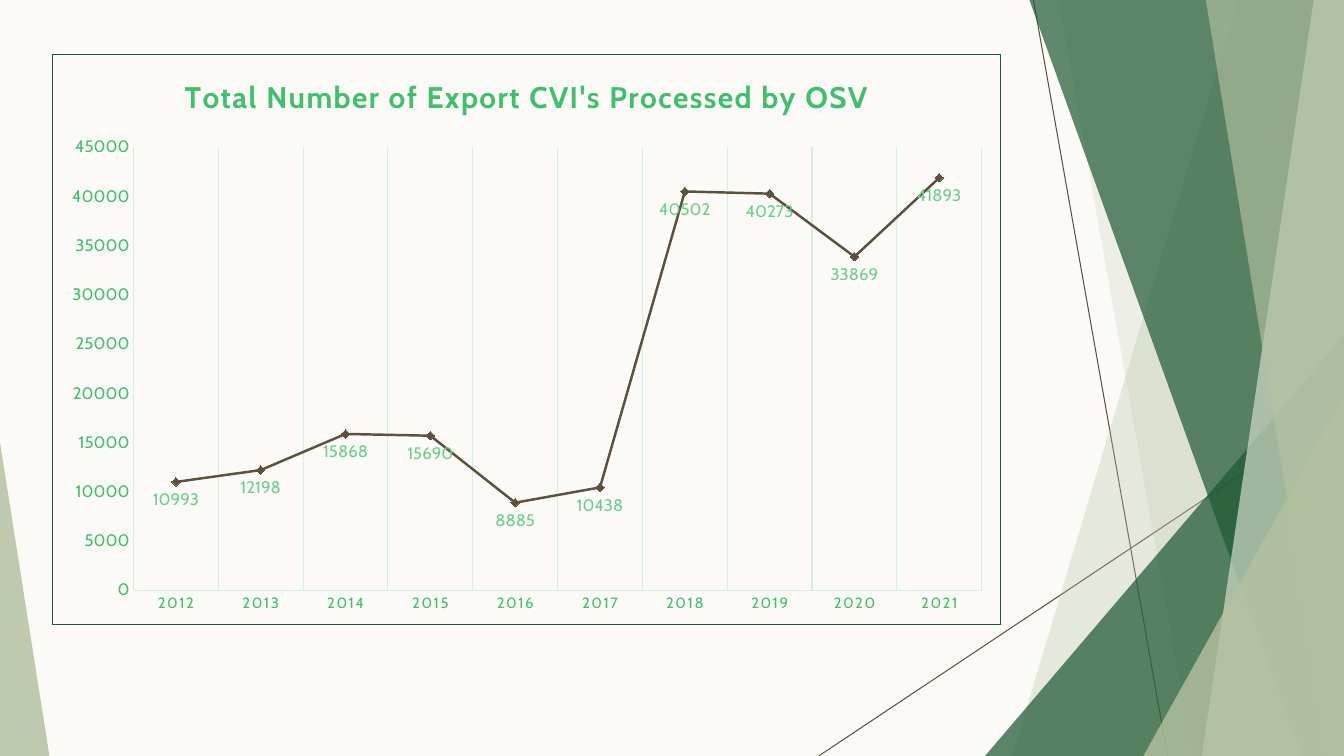
from dataclasses import dataclass

from pptx import Presentation
from pptx import util as u
from pptx.chart import data as cd
from pptx.dml.color import RGBColor
from pptx.enum import chart as ch
from pptx.enum import shapes
from pptx.oxml import parse_xml
from pptx.oxml.ns import nsdecls, qn


@dataclass(frozen=True)
class Theme:
    paper: str = "FBFAF6"
    forest: str = "1E5833"
    sage: str = "B5C1A1"
    mist: str = "D3DAC7"
    bark: str = "5D513E"
    leaf: str = "41BE6E"
    label: str = "6DCD90"
    grid: str = "D3F0DE"
    font: str = "Cabin"
    title_pt: float = 21.28
    value_pt: float = 11.97
    year_pt: float = 10.64
    base_pt: float = 10
    thin_pt: float = 0.75
    series_pt: float = 1.75
    spacing: str = "120"
    kerning: str = "1200"


T = Theme()
CVI_COUNTS = {
    "2012": 10993, "2013": 12198, "2014": 15868, "2015": 15690, "2016": 8885,
    "2017": 10438, "2018": 40502, "2019": 40273, "2020": 33869, "2021": 41893,
}


def rgb(color):
    return RGBColor.from_string(color)


def set_font(font, size, color, bold=False):
    font.name, font.size, font.bold = T.font, u.Pt(size), bold
    font.color.rgb = rgb(color)


def set_line(line, color, width=T.thin_pt):
    line.color.rgb = rgb(color)
    line.width = u.Pt(width)


def tint(sp, color, opacity):
    sp.shadow.inherit = False
    sp.fill.solid()
    sp.fill.fore_color.rgb = rgb(color)
    sp.line.fill.background()
    clr = sp._element.spPr.find(qn("a:solidFill"))[0]
    clr.append(parse_xml(f'<a:alpha {nsdecls("a")} val="{opacity * 1000}"/>'))


def add_ray(s, start, end):
    ln = s.shapes.add_connector(
        shapes.MSO_CONNECTOR.STRAIGHT, *(u.Inches(v) for v in start + end))
    set_line(ln.line, T.bark)
    ln._element.spPr.append(parse_xml(f'<a:effectLst {nsdecls("a")}/>'))


def add_band(s, box, top_x, bottom_x, color, opacity):
    left, top, width, height = box
    right, bottom = left + width, top + height
    corners = [(left + top_x, top), (right, top), (right, bottom), (left + bottom_x, bottom)]
    points = [(u.Inches(x), u.Inches(y)) for x, y in corners]
    fb = s.shapes.build_freeform(*points[0], scale=1.0)
    fb.add_line_segments(points[1:], close=True)
    tint(fb.convert_to_shape(), color, opacity)


def add_corner(s, box, width, height, apex, color, opacity):
    left, top, box_width, box_height = box
    x = left + apex * (box_width - width)
    y = top + box_height - height
    sp = s.shapes.add_shape(
        shapes.MSO_SHAPE.ISOSCELES_TRIANGLE, *(u.Inches(v) for v in (x, y, width, height)))
    sp.adjustments[0] = apex
    tint(sp, color, opacity)


def add_facets(s, box):
    left, top, width, height = box
    right, bottom = left + width, top + height
    add_ray(s, (left + 2.25, top), (left + 3.58, bottom))
    add_ray(s, (right, top + 4.03), (left + 0.12, bottom))
    add_band(s, box, 4.28, 2.04, T.sage, 30)
    add_band(s, box, 2.5, 3.83, T.sage, 20)
    add_corner(s, box, 3.56, 4.17, 1, T.forest, 72)
    add_band(s, box, 2.21, 4.91, T.forest, 70)
    add_band(s, box, 5.03, 3.92, T.mist, 70)
    add_band(s, box, 3.96, 5.18, T.sage, 65)
    add_corner(s, box, 1.99, 3.57, 1, T.sage, 80)


def style_axis(axis, size):
    axis.major_tick_mark = axis.minor_tick_mark = ch.XL_TICK_MARK.NONE
    set_font(axis.tick_labels.font, size, T.leaf)
    set_line(axis.format.line, T.grid)


def style_series(series):
    series.smooth = False
    set_line(series.format.line, T.bark, T.series_pt)
    marker = series.marker
    marker.style, marker.size = ch.XL_MARKER_STYLE.DIAMOND, 6
    marker.format.fill.solid()
    marker.format.fill.fore_color.rgb = rgb(T.bark)
    set_line(marker.format.line, T.bark)
    labels = series.data_labels
    labels.show_value = True
    labels.position = ch.XL_LABEL_POSITION.BELOW
    set_font(labels.font, T.value_pt, T.label)


def place_plot(chart, x, y, w, h):
    area = chart._chartSpace.chart.plotArea
    for old in area.findall(qn("c:layout")):
        area.remove(old)
    sizes = "".join(f'<c:{k} val="{v}"/>' for k, v in zip("xywh", (x, y, w, h)))
    area.insert(0, parse_xml(
        f'<c:layout {nsdecls("c")}><c:manualLayout><c:layoutTarget val="inner"/>'
        f'<c:xMode val="edge"/><c:yMode val="edge"/>{sizes}</c:manualLayout></c:layout>'))


def frame_chart(chart):
    chart._chartSpace.chart.addnext(parse_xml(
        f'<c:spPr {nsdecls("c", "a")}><a:noFill/><a:ln w="{u.Pt(T.thin_pt)}"><a:solidFill>'
        f'<a:srgbClr val="{T.forest}"/></a:solidFill></a:ln></c:spPr>'))


def kern_text(chart):
    for props in chart._chartSpace.iter(qn("a:defRPr"), qn("a:rPr")):
        props.set("kern", T.kerning)


def add_export_chart(s, box):
    cvi = cd.CategoryChartData()
    cvi.categories = list(CVI_COUNTS)
    cvi.add_series("Series 1", list(CVI_COUNTS.values()))
    chart = s.shapes.add_chart(
        ch.XL_CHART_TYPE.LINE_MARKERS, *(u.Inches(v) for v in box), cvi).chart
    set_font(chart.font, T.base_pt, T.forest)
    chart.has_legend = False
    chart.has_title = True
    p = chart.chart_title.text_frame.paragraphs[0]
    p.text = "Total Number of Export CVI's Processed by OSV"
    r = p.runs[0]
    set_font(r.font, T.title_pt, T.leaf, bold=True)
    r._r.get_or_add_rPr().set("spc", T.spacing)
    chart.chart_title.include_in_layout = False
    chart.plots[0].vary_by_categories = False
    years, counts = chart.category_axis, chart.value_axis
    style_axis(years, T.year_pt)
    years._element.xpath(".//a:defRPr")[0].set("spc", T.spacing)
    years.has_major_gridlines = True
    set_line(years.major_gridlines.format.line, T.grid)
    style_axis(counts, T.value_pt)
    counts.has_major_gridlines = False
    counts.minimum_scale, counts.maximum_scale, counts.major_unit = 0, 45000, 5000
    style_series(chart.plots[0].series[0])
    place_plot(chart, 0.085, 0.162, 0.895, 0.778)
    frame_chart(chart)
    kern_text(chart)


def build_chart_slide(prs):
    s = prs.slides.add_slide(prs.slide_layouts[6])
    s.background.fill.solid()
    s.background.fill.fore_color.rgb = rgb(T.paper)
    add_facets(s, (8, 0, 5.33, 7.5))
    add_corner(s, (0, 0, 8, 7.5), 0.49, 3.11, 0, T.sage, 85)
    add_export_chart(s, (0.52, 0.54, 9.41, 5.66))


def main():
    prs = Presentation()
    prs.slide_width, prs.slide_height = u.Inches(13.33), u.Inches(7.5)
    build_chart_slide(prs)
    prs.save("out.pptx")


if __name__ == "__main__":
    main()
